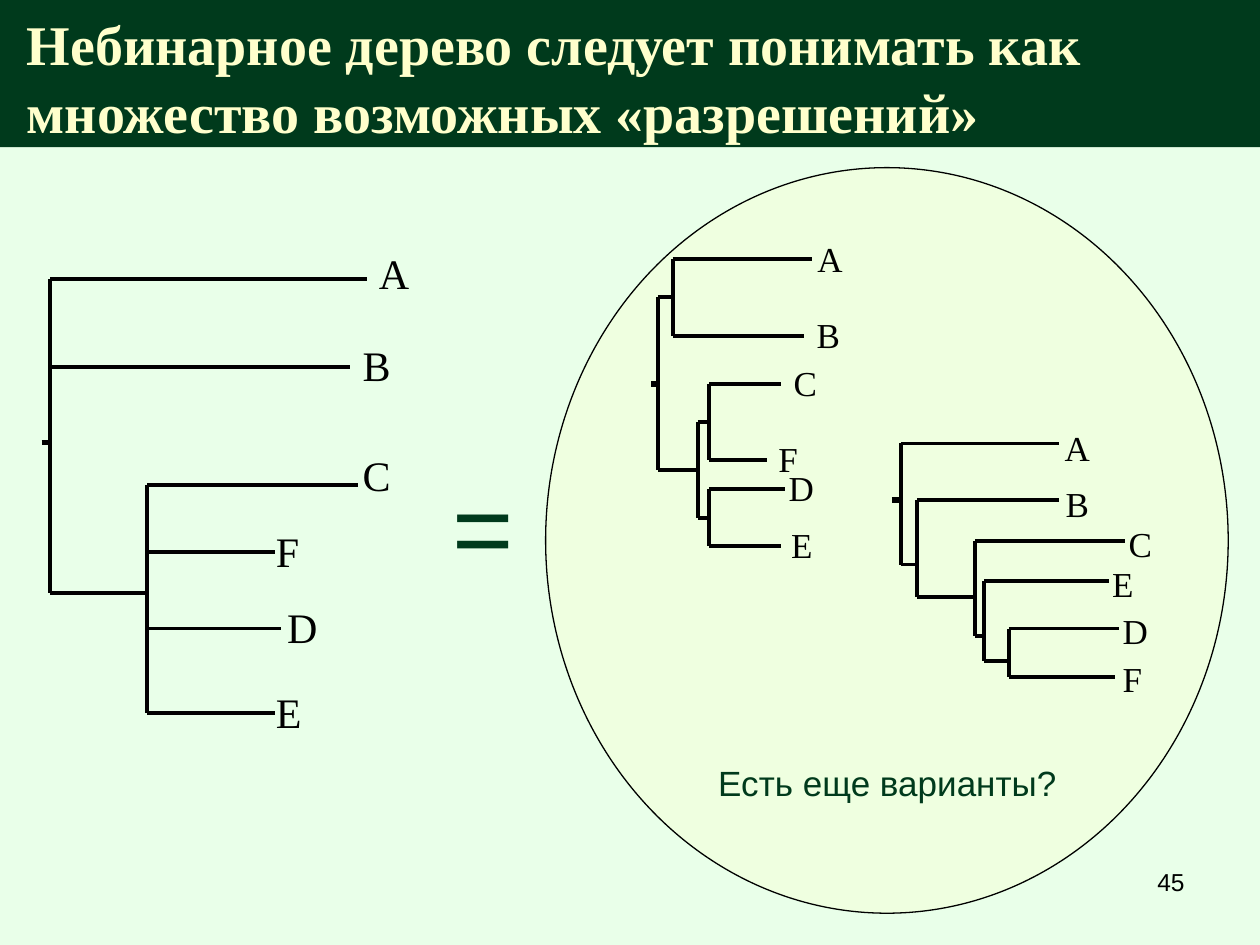
import pptx
import pptx.dml.color
import pptx.enum.shapes
import pptx.enum.text
import pptx.oxml
import pptx.oxml.ns
import pptx.util
from lxml import etree

Cm = pptx.util.Cm
Pt = pptx.util.Pt
Align = pptx.enum.text.PP_ALIGN
Anchor = pptx.enum.text.MSO_ANCHOR
Shapes = pptx.enum.shapes.MSO_SHAPE

COLORS = {"background": "E9FFE9", "dark": "003A1C", "cream": "FFFFCC", "black": "000000"}
SERIF, SANS = "Times New Roman", "Arial"

# Content (all positions in cm)
TITLE = ["Небинарное дерево следует понимать как", "множество возможных «разрешений»"]

# text, left, top, width, height, size, color, alignment, anchor, wrap
CAPTIONS = [
    ("=", 8.47, 9.93, 2.54, 1.27, 60, "dark", Align.CENTER, Anchor.MIDDLE, False),
    ("Есть еще варианты?", 13.89, 15.03, 8, 1.48, 20, "dark", Align.CENTER, Anchor.MIDDLE, False),
    ("45", 18.2, 17.35, 5.93, 1.32, 14, "black", Align.RIGHT, Anchor.TOP, True),
]

# A node is (spine x, branches); a branch is either
# (y, child node) or (y, tip x, label, label left, label top).
TREES = [
    {"size": 24, "root": (0.84, 8.92), "node": (1.01, [
        (5.63, 7.39, "A", 7.39, 4.87),
        (7.39, 7.06, "B", 7.06, 6.72),
        (11.96, (2.97, [
            (9.78, 7.21, "C", 7.06, 8.93),
            (11.13, 5.54, "F", 5.31, 10.46),
            (12.67, 5.66, "D", 5.54, 12.01),
            (14.38, 5.54, "E", 5.31, 13.72)])),
    ])},
    {"size": 20, "root": (13.13, 7.74), "node": (13.26, [
        (5.99, (13.56, [
            (5.23, 16.36, "A", 16.23, 4.66),
            (6.78, 16.21, "B", 16.21, 6.2)])),
        (9.47, (14.07, [
            (8.51, (14.3, [
                (7.75, 15.75, "C", 15.75, 7.16),
                (9.27, 15.47, "F", 15.44, 8.69)])),
            (10.44, (14.3, [
                (9.86, 15.82, "D", 15.65, 9.27),
                (11, 15.75, "E", 15.7, 10.43)])),
        ])),
    ])},
    {"size": 20, "root": (17.98, 10.08), "node": (18.16, [
        (8.94, 21.34, "A", 21.21, 8.47),
        (11.38, (18.49, [
            (10.08, 21.34, "B", 21.23, 9.6),
            (12.04, (19.66, [
                (10.9, 22.68, "C", 22.5, 10.41),
                (12.83, (19.84, [
                    (11.71, 22.35, "E", 22.17, 11.22),
                    (13.33, (20.34, [
                        (12.67, 22.56, "D", 22.38, 12.17),
                        (13.64, 22.48, "F", 22.38, 13.13)])),
                ])),
            ])),
        ])),
    ])},
]
LETTER_WIDTHS = {"A": 0.72, "B": 0.67, "C": 0.67, "D": 0.72, "E": 0.61, "F": 0.56}
CM_PER_POINT = 2.54 / 72


def color(name):
    return pptx.dml.color.RGBColor.from_string(COLORS[name])


def add_run(paragraph, text, font, size, color_name, bold=False):
    run = paragraph.add_run()
    run.text = text
    run.font.name, run.font.size, run.font.bold = font, Pt(size), bold
    run.font.color.rgb = color(color_name)


def add_preset(slide, kind, left, top, width, height, fill):
    shape = slide.shapes.add_shape(kind, Cm(left), Cm(top), Cm(width), Cm(height))
    shape.shadow.inherit = False
    shape.fill.solid()
    shape.fill.fore_color.rgb = color(fill)
    return shape


def add_line(shapes, x1, y1, x2, y2, width=2.25):
    line = shapes.add_connector(pptx.enum.shapes.MSO_CONNECTOR.STRAIGHT,
                                Cm(x1), Cm(y1), Cm(x2), Cm(y2))
    line.line.color.rgb = color("black")
    line.line.width = Pt(width)
    etree.SubElement(line._element.spPr, pptx.oxml.ns.qn("a:effectLst"))


def add_label(shapes, letter, left, top, size):
    width = 0.51 + LETTER_WIDTHS[letter] * size * CM_PER_POINT
    height = 0.25 + 1.2 * size * CM_PER_POINT
    box = shapes.add_textbox(Cm(left), Cm(top), Cm(width), Cm(height))
    box.text_frame.word_wrap = False
    box.text_frame.auto_size = pptx.enum.text.MSO_AUTO_SIZE.SHAPE_TO_FIT_TEXT
    add_run(box.text_frame.paragraphs[0], letter, SERIF, size, "black")


def draw_node(shapes, node, size):
    spine, branches = node
    add_line(shapes, spine, branches[0][0], spine, branches[-1][0])
    for y, target, *label in branches:
        if label:
            add_line(shapes, spine, y, target, y)
            add_label(shapes, *label, size)
        else:
            add_line(shapes, spine, y, target[0], y)
            draw_node(shapes, target, size)


presentation = pptx.Presentation()
presentation.slide_width, presentation.slide_height = Cm(25.4), Cm(19.05)
slide = presentation.slides.add_slide(presentation.slide_layouts[6])
slide.background.fill.solid()
slide.background.fill.fore_color.rgb = color("background")

# Translucent ellipse around the possible resolutions
ellipse = add_preset(slide, Shapes.OVAL, 11, 3.38, 13.76, 15.03, "cream")
ellipse.line.color.rgb = color("black")
ellipse.line.width = Pt(0.75)
fill_color = ellipse._element.spPr.find(".//" + pptx.oxml.ns.qn("a:srgbClr"))
etree.SubElement(fill_color, pptx.oxml.ns.qn("a:alpha"), val="31000")

# Title band
band = add_preset(slide, Shapes.RECTANGLE, 0, 0, 25.4, 2.97, "dark")
band.line.fill.background()
frame = band.text_frame
frame.word_wrap = True
frame.vertical_anchor = Anchor.TOP
frame.margin_left, frame.margin_right = Cm(0.54), Cm(0.25)
frame.margin_top, frame.margin_bottom = Cm(0.2), Cm(0)
for index, text in enumerate(TITLE):
    paragraph = frame.add_paragraph() if index else frame.paragraphs[0]
    paragraph.alignment = Align.LEFT
    add_run(paragraph, text, SERIF, 32, "cream", bold=True)

# Equals sign, question and slide number
for text, left, top, width, height, size, ink, alignment, anchor, wrap in CAPTIONS:
    box = slide.shapes.add_textbox(Cm(left), Cm(top), Cm(width), Cm(height))
    box.text_frame.word_wrap = wrap
    box.text_frame.vertical_anchor = anchor
    box.text_frame.paragraphs[0].alignment = alignment
    add_run(box.text_frame.paragraphs[0], text, SANS, size, ink)

# Trees, each in its own group
for tree in TREES:
    group = slide.shapes.add_group_shape()
    root_x, root_y = tree["root"]
    add_line(group.shapes, root_x, root_y, tree["node"][0], root_y, 3)
    draw_node(group.shapes, tree["node"], tree["size"])

presentation.save("out.pptx")
